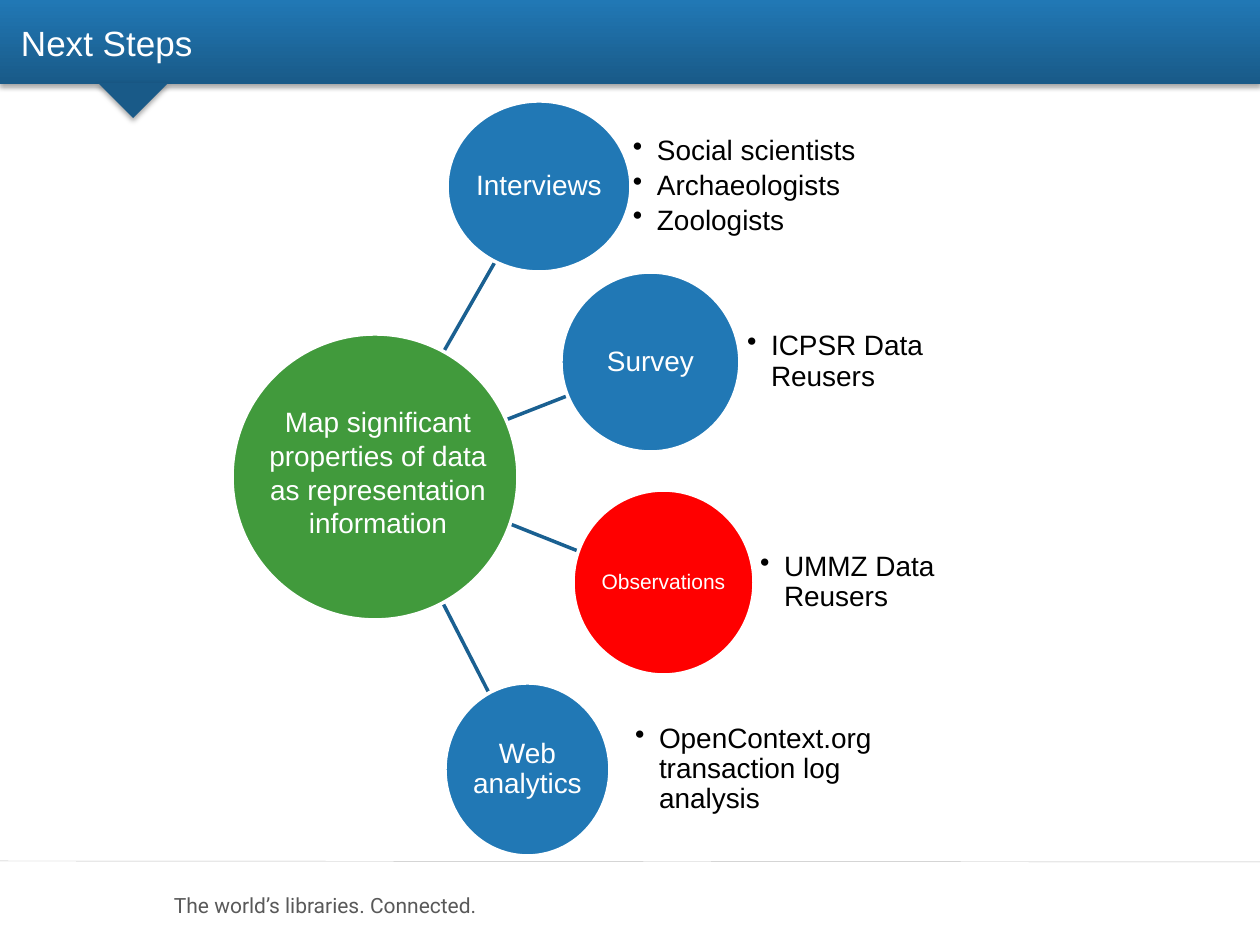
from lxml import etree
from pptx import Presentation
from pptx.dml.color import RGBColor
from pptx.enum.shapes import MSO_CONNECTOR, MSO_SHAPE
from pptx.enum.text import MSO_ANCHOR, PP_ALIGN
from pptx.oxml.ns import qn
from pptx.util import Pt

EMU_PER_PX = 914400 / 126

WHITE = RGBColor(0xFF, 0xFF, 0xFF)
BLACK = RGBColor(0x00, 0x00, 0x00)
GREY = RGBColor(0x59, 0x59, 0x59)
RULE = RGBColor(0xBF, 0xBF, 0xBF)
NAVY = RGBColor(0x19, 0x5A, 0x88)
SPOKE = RGBColor(0x1A, 0x60, 0x91)
BLUE = RGBColor(0x21, 0x78, 0xB5)
GREEN = RGBColor(0x41, 0x9A, 0x3C)
RED = RGBColor(0xFF, 0x00, 0x00)

HUB = (232, 334, 286, 286)

# label, label size, colour, circle box, list left and width, list items, spoke ends
BRANCHES = [
    ("Interviews", 16, BLUE, (447, 101, 184, 171), (633, 275),
     ["Social scientists", "Archaeologists", "Zoologists"], (432, 372, 495, 262)),
    ("Survey", 16, BLUE, (561, 272, 179, 180), (747, 268),
     ["ICPSR Data Reusers"], (475, 432, 567, 396)),
    ("Observations", 12, RED, (573, 490, 181, 185), (760, 271),
     ["UMMZ Data Reusers"], (475, 510, 578, 551)),
    ("Web analytics", 16, BLUE, (445, 683, 165, 173), (635, 248),
     ["OpenContext.org transaction log analysis"], (427, 572, 489, 693)),
]


def px(*values):
    return [round(v * EMU_PER_PX) for v in values]


def set_frame(tf, insets, anchor, wrap=True):
    tf.margin_left, tf.margin_top, tf.margin_right, tf.margin_bottom = px(*insets)
    tf.vertical_anchor = anchor
    tf.word_wrap = wrap


def add_run(p, text, size, color, font="Arial"):
    r = p.add_run()
    r.text = text
    r.font.name = font
    r.font.size = Pt(size)
    r.font.color.rgb = color


def add_text(slide, box, text, size, color, insets=(13, 6, 13, 6), font="Arial",
             anchor=MSO_ANCHOR.MIDDLE, align=PP_ALIGN.LEFT, wrap=True):
    tf = slide.shapes.add_textbox(*px(*box)).text_frame
    set_frame(tf, insets, anchor, wrap)
    p = tf.paragraphs[0]
    p.alignment = align
    add_run(p, text, size, color, font)


def add_list(slide, box, items):
    tf = slide.shapes.add_textbox(*px(*box)).text_frame
    set_frame(tf, (0, 0, 0, 0), MSO_ANCHOR.MIDDLE)
    indent = px(24)[0]
    for i, item in enumerate(items):
        p = tf.add_paragraph() if i else tf.paragraphs[0]
        p.line_spacing = 0.9
        p.space_after = Pt(2.5)
        pPr = p._p.get_or_add_pPr()
        pPr.set("marL", str(indent))
        pPr.set("indent", str(-indent))
        etree.SubElement(pPr, qn("a:buChar")).set("char", "•")
        add_run(p, item, 16, BLACK)


def add_line(slide, ends, color, width):
    line = slide.shapes.add_connector(MSO_CONNECTOR.STRAIGHT, *px(*ends))
    line.line.color.rgb = color
    line.line.width = Pt(width)
    etree.SubElement(line._element.spPr, qn("a:effectLst"))


def add_circle(slide, box, color):
    sp = slide.shapes.add_shape(MSO_SHAPE.OVAL, *px(*box))
    sp.shadow.inherit = False
    sp.fill.solid()
    sp.fill.fore_color.rgb = color
    sp.line.color.rgb = WHITE
    sp.line.width = Pt(2)
    return sp


def add_label(sp, text, size):
    tf = sp.text_frame
    set_frame(tf, (0, 0, 0, 0), MSO_ANCHOR.MIDDLE)
    p = tf.paragraphs[0]
    p.alignment = PP_ALIGN.CENTER
    p.line_spacing = 0.9
    add_run(p, text, size, WHITE)


def add_shadowed(slide, kind, box):
    """Outline-free shape with a soft shadow below it."""
    sp = slide.shapes.add_shape(kind, *px(*box))
    sp.line.fill.background()
    effects = etree.SubElement(sp._element.spPr, qn("a:effectLst"))
    shadow = etree.SubElement(effects, qn("a:outerShdw"), blurRad=str(Pt(3.1)),
                              dist=str(Pt(1.8)), dir="5400000", rotWithShape="0")
    color = etree.SubElement(shadow, qn("a:srgbClr"), val=str(BLACK))
    etree.SubElement(color, qn("a:alpha"), val="35000")
    return sp


def add_header(slide):
    bar = add_shadowed(slide, MSO_SHAPE.ROUNDED_RECTANGLE, (0, 0, 1260, 84))
    bar.adjustments[0] = 0
    bar.fill.gradient()
    bar.fill.gradient_angle = 90
    for stop, color in zip(bar.fill.gradient_stops, (NAVY, BLUE)):
        stop.color.rgb = color
    pointer = add_shadowed(slide, MSO_SHAPE.ISOSCELES_TRIANGLE, (98, 83, 70, 35))
    pointer.rotation = 180
    pointer.fill.solid()
    pointer.fill.fore_color.rgb = NAVY
    add_text(slide, (21, 0, 1176, 84), "Next Steps", 20, WHITE,
             insets=(0, 6, 0, 6), wrap=False)


def main():
    prs = Presentation()
    prs.slide_width, prs.slide_height = px(1260, 945)
    slide = prs.slides.add_slide(prs.slide_layouts[6])

    # Footer and header
    add_text(slide, (161, 886, 354, 38), "The world’s libraries. Connected.",
             12, GREY, font="Roboto", wrap=False)
    add_line(slide, (0, 861, 1260, 862), RULE, 0.25)
    add_header(slide)

    # Spokes lie behind the circles
    for *_, ends in BRANCHES:
        add_line(slide, ends, SPOKE, 2)

    # Hub
    add_circle(slide, HUB, GREEN)
    add_text(slide, (252, 399, 252, 183),
             "Map significant properties of data as representation information",
             16, WHITE, anchor=MSO_ANCHOR.TOP, align=PP_ALIGN.CENTER)

    # Branches with their lists
    for label, size, color, box, (left, width), items, _ in BRANCHES:
        add_label(add_circle(slide, box, color), label, size)
        add_list(slide, (left, box[1], width, box[3]), items)

    prs.save("out.pptx")


if __name__ == "__main__":
    main()
